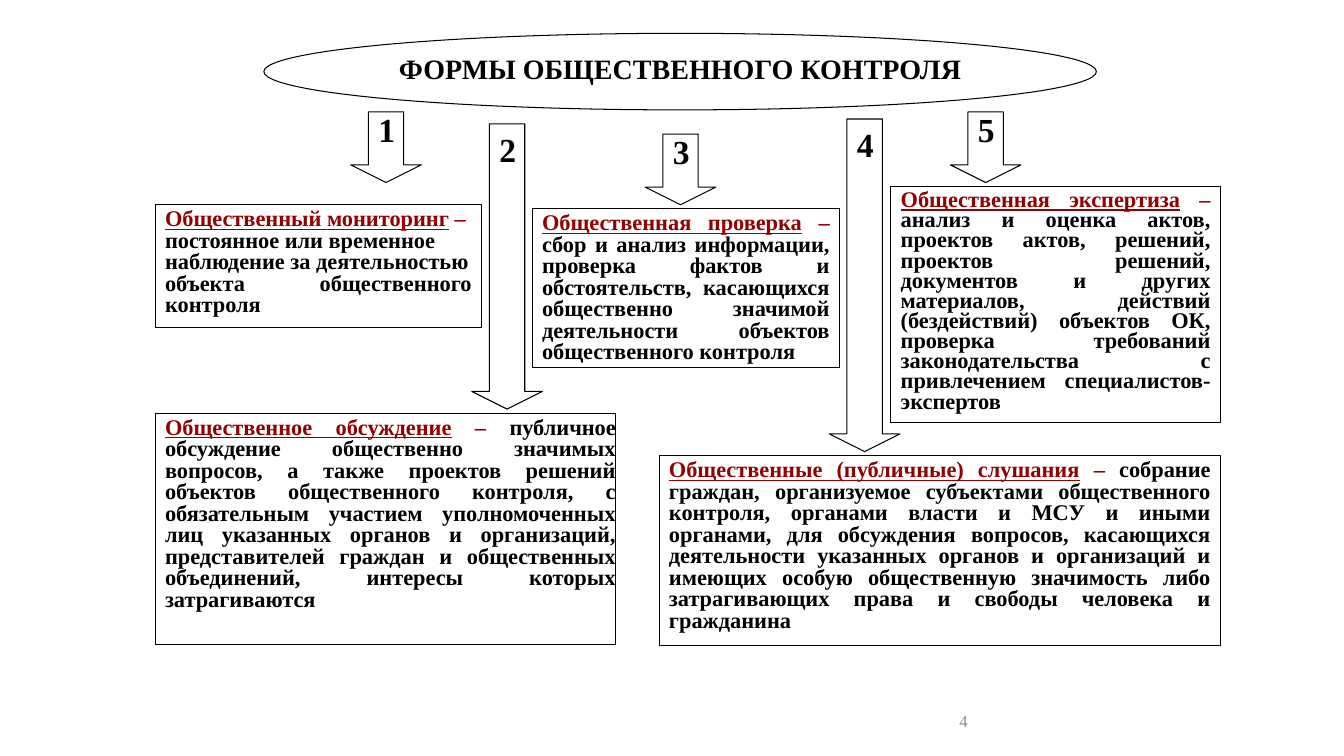
from pptx import Presentation
from pptx.dml.color import RGBColor
from pptx.enum.shapes import MSO_SHAPE
from pptx.enum.text import MSO_ANCHOR, PP_ALIGN
from pptx.util import Cm, Pt

BLACK = RGBColor(0x00, 0x00, 0x00)
DARK_RED = RGBColor(0x92, 0x00, 0x00)
GRAY = RGBColor(0x8C, 0x8C, 0x8C)
FONT = "Times New Roman"

TITLE = "ФОРМЫ ОБЩЕСТВЕННОГО КОНТРОЛЯ"
ARROW_WIDTH = 1.78

# number, left, top, height, line spacing
ARROWS = [
    ("1", 8.84, 2.82, 1.78, 0.8),
    ("3", 16.26, 3.38, 1.78, 0.8),
    ("5", 23.95, 2.82, 1.78, 0.8),
    ("2", 11.89, 3.12, 7.19, 1.0),
    ("4", 20.9, 3.0, 8.38, 1.0),
]

# term, lines of its definition, (left, top, width, height), format values
MONITORING = (
    "Общественный мониторинг",
    ["", "постоянное или временное", "наблюдение за деятельностью",
     "объекта общественного контроля"],
    (3.91, 5.16, 8.23, 3.1), {})
INSPECTION = (
    "Общественная проверка",
    ["сбор и анализ информации, проверка фактов и обстоятельств, касающихся "
     "общественно значимой деятельности объектов общественного контроля"],
    (13.41, 5.26, 7.75, 3.99), {})
EXPERTISE = (
    "Общественная экспертиза",
    ["анализ и оценка актов, проектов актов, решений, проектов решений, "
     "документов и других материалов, действий (бездействий) объектов ОК, "
     "проверка требований законодательства с привлечением "
     "специалистов-экспертов"],
    (22.45, 4.7, 8.31, 5.94), {"spacing": 0.75})
DISCUSSION = (
    "Общественное обсуждение",
    ["публичное обсуждение общественно значимых вопросов, а также проектов "
     "решений объектов общественного контроля, с обязательным участием "
     "уполномоченных лиц указанных органов и организаций, представителей "
     "граждан и общественных объединений, интересы которых затрагиваются"],
    (3.91, 10.41, 11.61, 5.84), {"margin_right": 0})
HEARINGS = (
    "Общественные (публичные) слушания",
    ["собрание граждан, организуемое субъектами общественного контроля, "
     "органами власти и МСУ и иными органами, для обсуждения вопросов, "
     "касающихся деятельности указанных органов и организаций и имеющих "
     "особую общественную значимость либо затрагивающих права и свободы "
     "человека и гражданина"],
    (16.61, 11.48, 14.15, 4.78), {})


def set_format(obj, values):
    for name, value in values.items():
        setattr(obj, name, value)


def add_outlined(slide, kind, box, anchor=MSO_ANCHOR.TOP):
    """Add an unfilled shape with a thin black outline; box is in centimetres."""
    sp = slide.shapes.add_shape(kind, *map(Cm, box))
    sp.shadow.inherit = False
    sp.fill.background()
    sp.line.color.rgb = BLACK
    sp.line.width = Pt(0.75)
    set_format(sp.text_frame, {"word_wrap": True, "vertical_anchor": anchor})
    return sp


def add_run(p, text, size, color=BLACK, bold=True, underline=False):
    r = p.add_run()
    r.text = text
    set_format(r.font, {"name": FONT, "size": Pt(size), "bold": bold,
                        "underline": underline})
    r.font.color.rgb = color


def add_title(slide):
    sp = add_outlined(slide, MSO_SHAPE.OVAL, (6.65, 0.84, 20.98, 1.93),
                      MSO_ANCHOR.MIDDLE)
    p = sp.text_frame.paragraphs[0]
    set_format(p, {"alignment": PP_ALIGN.CENTER, "line_spacing": 0.8,
                   "space_after": Pt(10)})
    add_run(p, TITLE, 20)


def add_definition(slide, term, lines, box, options):
    """Add a box whose first line opens with the underlined term."""
    sp = add_outlined(slide, MSO_SHAPE.FLOWCHART_PROCESS, box)
    tf = sp.text_frame
    tf.margin_right = Cm(options.get("margin_right", 0.25))
    for i, line in enumerate(lines):
        p = tf.add_paragraph() if i else tf.paragraphs[0]
        set_format(p, {"alignment": PP_ALIGN.JUSTIFY,
                       "line_spacing": options.get("spacing", 0.8)})
        if i == 0:
            add_run(p, term, 16, DARK_RED, underline=True)
            add_run(p, " – ", 16, DARK_RED)
        if line:
            add_run(p, line, 16)


def add_arrow(slide, number, left, top, height, spacing):
    sp = add_outlined(slide, MSO_SHAPE.DOWN_ARROW,
                      (left, top, ARROW_WIDTH, height))
    sp.adjustments[0] = 0.5
    sp.adjustments[1] = 0.25
    p = sp.text_frame.paragraphs[0]
    set_format(p, {"alignment": PP_ALIGN.JUSTIFY, "line_spacing": spacing,
                   "space_after": Pt(10)})
    add_run(p, number, 24)


def add_page_number(slide, number):
    sp = slide.shapes.add_textbox(Cm(23.93), Cm(17.65), Cm(7.62), Cm(1.02))
    tf = sp.text_frame
    set_format(tf, {"word_wrap": True, "vertical_anchor": MSO_ANCHOR.MIDDLE})
    p = tf.paragraphs[0]
    p.alignment = PP_ALIGN.JUSTIFY
    add_run(p, number, 12, GRAY, bold=False)


def main():
    prs = Presentation()
    set_format(prs, {"slide_width": Cm(33.87), "slide_height": Cm(19.05)})
    slide = prs.slides.add_slide(prs.slide_layouts[6])
    add_title(slide)
    for definition in (MONITORING, INSPECTION, EXPERTISE):
        add_definition(slide, *definition)
    for arrow in ARROWS:
        add_arrow(slide, *arrow)
    for definition in (DISCUSSION, HEARINGS):
        add_definition(slide, *definition)
    add_page_number(slide, "4")
    prs.save("out.pptx")


if __name__ == "__main__":
    main()
